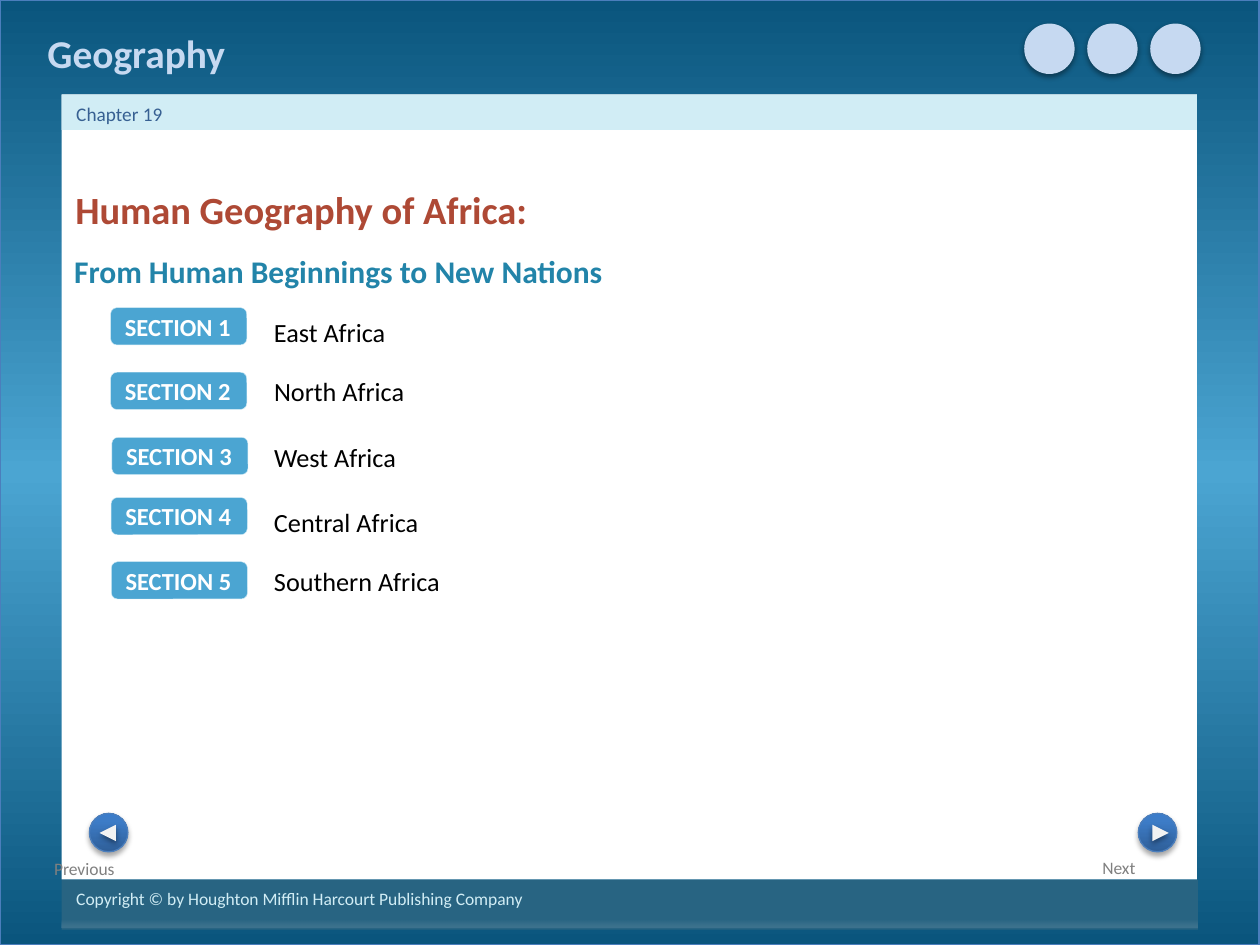
from dataclasses import dataclass
from typing import NamedTuple

from lxml.etree import SubElement
from pptx import Presentation
from pptx.dml.color import RGBColor
from pptx.enum.shapes import MSO_SHAPE
from pptx.enum.text import MSO_ANCHOR, MSO_AUTO_SIZE
from pptx.oxml.ns import qn
from pptx.util import Pt


class Box(NamedTuple):
    left: float
    top: float
    width: float
    height: float


class Stop(NamedTuple):
    place: int
    color: str
    alpha: int = 100


class Shade(NamedTuple):
    alpha: int
    blur: float
    gap: float


class Row(NamedTuple):
    label: str
    place: str
    left: float
    top: float
    text_top: float
    width: float


class Button(NamedTuple):
    label: str
    text: Box
    disc: Box
    arrow: Box
    turn: int


@dataclass(frozen=True)
class Theme:
    font: str = "Calibri"
    white: str = "FFFFFF"
    black: str = "000000"
    gray: str = "808080"
    arrow: str = "F2F2F2"
    deep: str = "0A557D"
    sky: str = "4BA5D2"
    pale: str = "D1EDF5"
    rim: str = "D2EBF5"
    foot: str = "286482"
    mist: str = "C6D9F1"
    edge: str = "4B7EBC"
    navy: str = "376092"
    teal: str = "2284A9"
    rust: str = "AE4935"
    small: float = 10
    note: float = 11
    badge: float = 14
    body: float = 15
    sub: float = 18
    title: float = 22
    brand: float = 22.5


LOOK = Theme()
FRAME = (Stop(0, LOOK.deep), Stop(50, LOOK.sky), Stop(100, LOOK.deep))
DISC = (Stop(0, "2F5F99"), Stop(80, "3D7CC7"), Stop(100, "3A7CCB"))
GLOSS = (Stop(0, "9AAFC1", 20), Stop(100, "E2E7EB", 0))
SOFT = Shade(35, 3.1, 1.8)
FIRM = Shade(38, 3.1, 1.6)

ROWS = (
    Row("SECTION 1", "East Africa", 63.2, 175.8, 177.4, 82.1),
    Row("SECTION 2", "North Africa", 63.2, 212.7, 211, 90),
    Row("SECTION 3", "West Africa", 63.9, 249.9, 248.4, 85),
    Row("SECTION 4", "Central Africa", 63.5, 284.3, 285.8, 97.9),
    Row("SECTION 5", "Southern Africa", 63.6, 321, 319.3, 110.2),
)
BUTTONS = (
    Button("Next", Box(622.8, 486.4, 77.8, 18.7), Box(650.5, 464.8, 22, 22),
           Box(658.5, 471.3, 9.4, 9.4), 90),
    Button("Previous", Box(23.8, 487, 77.8, 18.7), Box(51.1, 464.8, 22, 22),
           Box(56.9, 471.3, 9.4, 9.4), 270),
)


def span(box: Box) -> list:
    return [Pt(value) for value in box]


def blend(shape, stops: tuple) -> None:
    shape.fill.gradient()
    grad = shape._element.spPr.find(qn("a:gradFill"))
    chain = grad.find(qn("a:gsLst"))
    for old in list(chain):
        chain.remove(old)
    for stop in stops:
        node = SubElement(chain, qn("a:gs"), pos=str(stop.place * 1000))
        tint = SubElement(node, qn("a:srgbClr"), val=stop.color)
        if stop.alpha < 100:
            SubElement(tint, qn("a:alpha"), val=str(stop.alpha * 1000))
    grad.find(qn("a:lin")).set("ang", "16200000")


def cast(shape, shade: Shade) -> None:
    effects = shape._element.spPr.find(qn("a:effectLst"))
    outer = SubElement(effects, qn("a:outerShdw"), blurRad=str(Pt(shade.blur)),
                       dist=str(Pt(shade.gap)), dir="5400000", rotWithShape="0")
    tint = SubElement(outer, qn("a:srgbClr"), val=LOOK.black)
    SubElement(tint, qn("a:alpha"), val=str(shade.alpha * 1000))


def draw(slide, box: Box, fill: str | tuple, kind=MSO_SHAPE.RECTANGLE,
         line: str | None = None, weight: float = 0.75,
         shade: Shade | None = None, turn: int = 0):
    shape = slide.shapes.add_shape(kind, *span(box))
    shape.shadow.inherit = False
    shape.rotation = turn
    if isinstance(fill, tuple):
        blend(shape, fill)
    else:
        shape.fill.solid()
        shape.fill.fore_color.rgb = RGBColor.from_string(fill)
    if line:
        shape.line.color.rgb = RGBColor.from_string(line)
        shape.line.width = Pt(weight)
    else:
        shape.line.fill.background()
    if shade:
        cast(shape, shade)
    return shape


def write(slide, text: str, box: Box, size: float, color: str,
          bold: bool = False, wrap: bool = True, host=None) -> None:
    shape = host or slide.shapes.add_textbox(*span(box))
    frame = shape.text_frame
    frame.word_wrap = wrap
    if not wrap:
        frame.auto_size = MSO_AUTO_SIZE.SHAPE_TO_FIT_TEXT
    frame.vertical_anchor = MSO_ANCHOR.MIDDLE if host else MSO_ANCHOR.TOP
    line = frame.paragraphs[0]
    line.alignment = 1
    run = line.add_run()
    run.text = text
    run.font.name = LOOK.font
    run.font.size = Pt(size)
    run.font.bold = bold
    run.font.color.rgb = RGBColor.from_string(color)


def draw_frame(slide) -> None:
    draw(slide, Box(0, 0, 719.5, 540), FRAME, line=LOOK.edge, shade=SOFT)
    draw(slide, Box(35.2, 54, 648.8, 448.6), LOOK.white)
    draw(slide, Box(35.2, 54, 648.8, 20.2), LOOK.pale)
    draw(slide, Box(35.2, 503, 649.3, 28.3), LOOK.foot)
    draw(slide, Box(35.2, 526.3, 649.3, 3.8), GLOSS)
    write(slide, "Copyright © by Houghton Mifflin Harcourt Publishing Company",
          Box(36.5, 504, 648, 23.8), LOOK.small, LOOK.pale)
    for spot in range(3):
        draw(slide, Box(585.3 + spot * 36, 13.5, 28.8, 28.8), LOOK.mist,
             MSO_SHAPE.OVAL, shade=FIRM)


def draw_button(slide, item: Button) -> None:
    write(slide, item.label, item.text, LOOK.small, LOOK.gray)
    draw(slide, item.disc, DISC, MSO_SHAPE.OVAL, line=LOOK.edge, shade=SOFT)
    draw(slide, item.arrow, LOOK.arrow, MSO_SHAPE.ISOSCELES_TRIANGLE,
         shade=FIRM, turn=item.turn)


def draw_row(slide, row: Row) -> None:
    box = Box(row.left, row.top, 77.8, 21.3)
    badge = draw(slide, box, LOOK.sky, MSO_SHAPE.ROUNDED_RECTANGLE,
                 line=LOOK.rim, weight=0.25)
    write(slide, row.label, box, LOOK.badge, LOOK.white, bold=True, host=badge)
    write(slide, row.place, Box(149.5, row.text_top, row.width, 25.4),
          LOOK.body, LOOK.black, wrap=False)


def main() -> None:
    deck = Presentation()
    deck.slide_width, deck.slide_height = Pt(720), Pt(540)
    slide = deck.slides.add_slide(deck.slide_layouts[6])
    draw_frame(slide)
    for item in BUTTONS:
        draw_button(slide, item)
    write(slide, "Chapter 19", Box(36.5, 54.7, 648, 18.7), LOOK.note, LOOK.navy)
    write(slide, "Geography", Box(20, 13, 311.8, 30.2), LOOK.brand, LOOK.mist, bold=True)
    write(slide, "From Human Beginnings to New Nations",
          Box(35.3, 140.4, 648, 28.8), LOOK.sub, LOOK.teal, bold=True)
    write(slide, "Human Geography of Africa:",
          Box(36, 103, 648, 30.2), LOOK.title, LOOK.rust, bold=True)
    for row in ROWS:
        draw_row(slide, row)
    deck.save("out.pptx")


if __name__ == "__main__":
    main()
